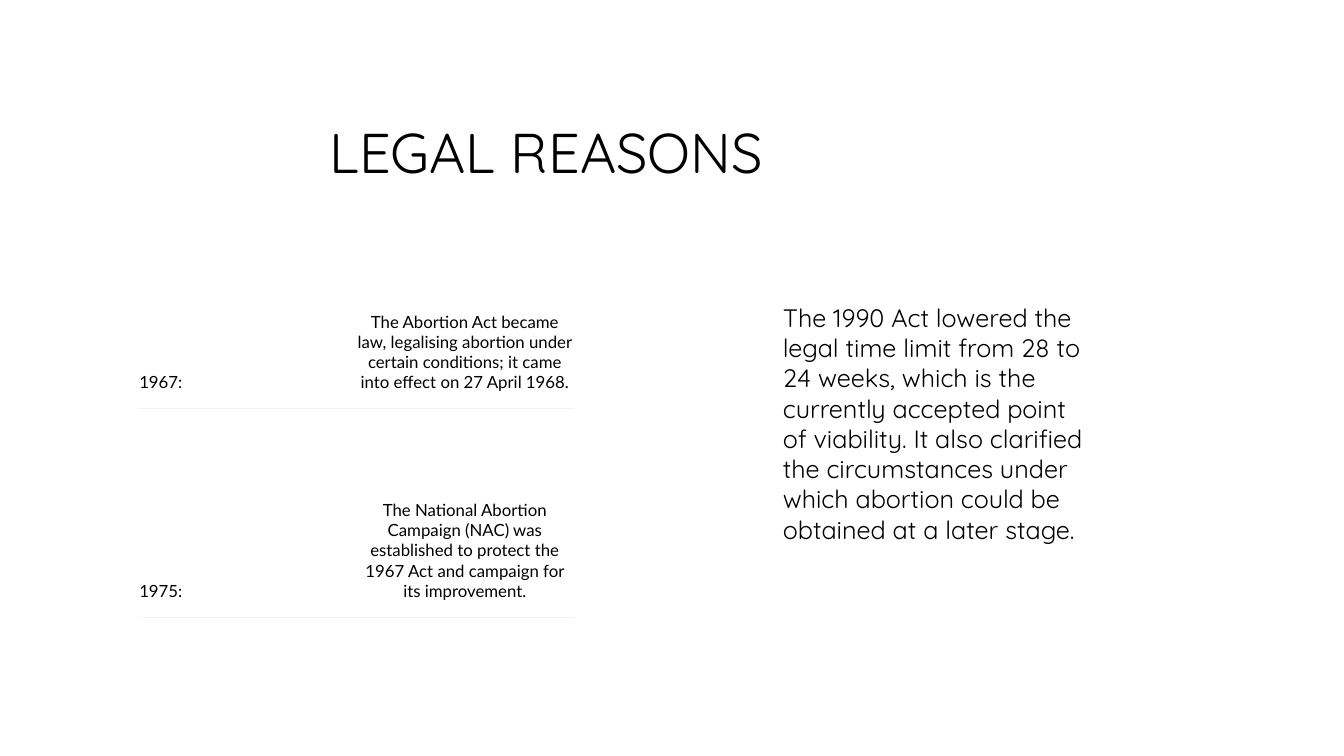
from lxml import etree
from pptx import Presentation
from pptx.dml.color import RGBColor
from pptx.enum.text import MSO_ANCHOR, MSO_AUTO_SIZE, PP_ALIGN
from pptx.oxml.ns import qn
from pptx.util import Cm, Pt

LEFT, CENTER = PP_ALIGN.LEFT, PP_ALIGN.CENTER
TOP, MIDDLE, BOTTOM = MSO_ANCHOR.TOP, MSO_ANCHOR.MIDDLE, MSO_ANCHOR.BOTTOM
FIT_SHAPE = MSO_AUTO_SIZE.SHAPE_TO_FIT_TEXT
BLACK, WHITE, RULE_GREY = "000000", "FFFFFF", "F3F3F3"


def color(value):
    return RGBColor.from_string(value)


def write(frame, text, font, size, align=LEFT):
    frame.word_wrap = True
    para = frame.paragraphs[0]
    para.alignment = align
    span = para.add_run()
    span.text = text
    span.font.name = font
    span.font.size = Pt(size)
    span.font.color.rgb = color(BLACK)
    return para


deck = Presentation()
deck.slide_width, deck.slide_height = Cm(33.87), Cm(19.05)
page = deck.slides.add_slide(deck.slide_layouts[6])
page.background.fill.solid()
page.background.fill.fore_color.rgb = color(WHITE)

# Title
title = page.shapes.add_textbox(Cm(8.05), Cm(2.13), Cm(23.93), Cm(3.58))
title.text_frame.vertical_anchor = MIDDLE
write(title.text_frame, "LEGAL REASONS", "Quicksand", 40).line_spacing = 0.9

# Timeline table
events = [
    ("1967:", "The Abortion Act became law, legalising abortion under certain "
     "conditions; it came into effect on 27 April 1968."),
    ("1975:", "The National Abortion Campaign (NAC) was established to protect "
     "the 1967 Act and campaign for its improvement."),
]
timeline = page.shapes.add_table(
    len(events), 2, Cm(3.51), Cm(5.72), Cm(10.94), Cm(9.83)).table
timeline.first_row = False
timeline.horz_banding = False
for row, height in zip(timeline.rows, (4.57, 5.26)):
    row.height = Cm(height)

for row_index, event in enumerate(events):
    for column_index, (text, align) in enumerate(zip(event, (LEFT, CENTER))):
        cell = timeline.cell(row_index, column_index)
        cell.margin_left = cell.margin_right = 0
        cell.margin_top = cell.margin_bottom = Cm(0.41)
        cell.vertical_anchor = BOTTOM
        cell.fill.solid()
        cell.fill.fore_color.rgb = color(WHITE)
        write(cell.text_frame, text, "Lato", 12, align)

        # Rules below each row, shared with the top of the next one
        sides = ("a:lnT", "a:lnB") if row_index else ("a:lnB",)
        properties = cell._tc.get_or_add_tcPr()
        for position, side in enumerate(sides):
            line = etree.Element(qn(side), w=str(Pt(1)))
            fill = etree.SubElement(line, qn("a:solidFill"))
            etree.SubElement(fill, qn("a:srgbClr"), val=RULE_GREY)
            properties.insert(position, line)

# 1990 Act paragraph
act_box = page.shapes.add_textbox(Cm(19.48), Cm(7.49), Cm(8.1), Cm(7.95))
act_box.text_frame.vertical_anchor = TOP
act_box.text_frame.auto_size = FIT_SHAPE
write(act_box.text_frame,
      "The 1990 Act lowered the legal time limit from 28 to 24 weeks, which is "
      "the currently accepted point of viability. It also clarified the "
      "circumstances under which abortion could be obtained at a later stage.",
      "Quicksand", 18)

deck.save("out.pptx")
